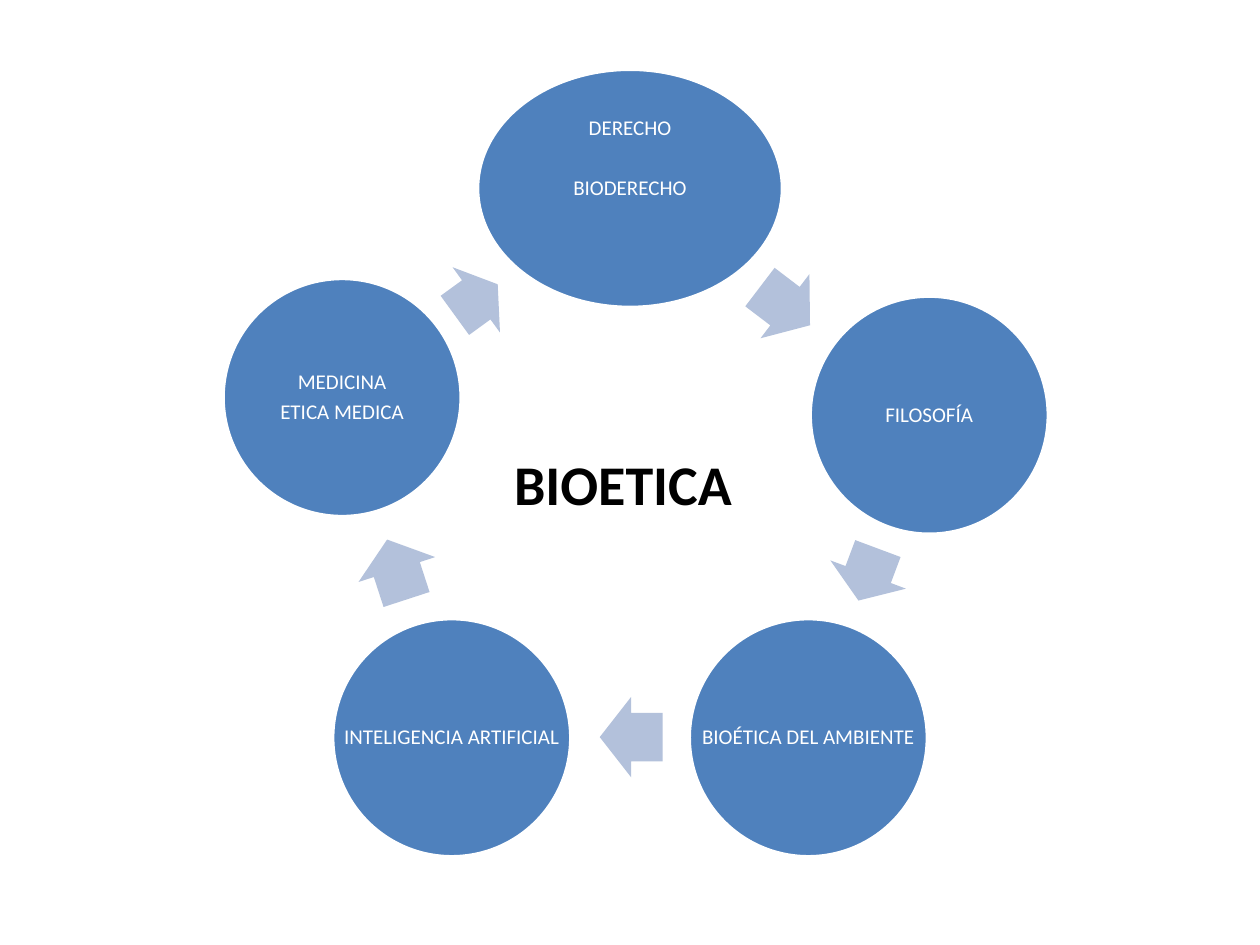
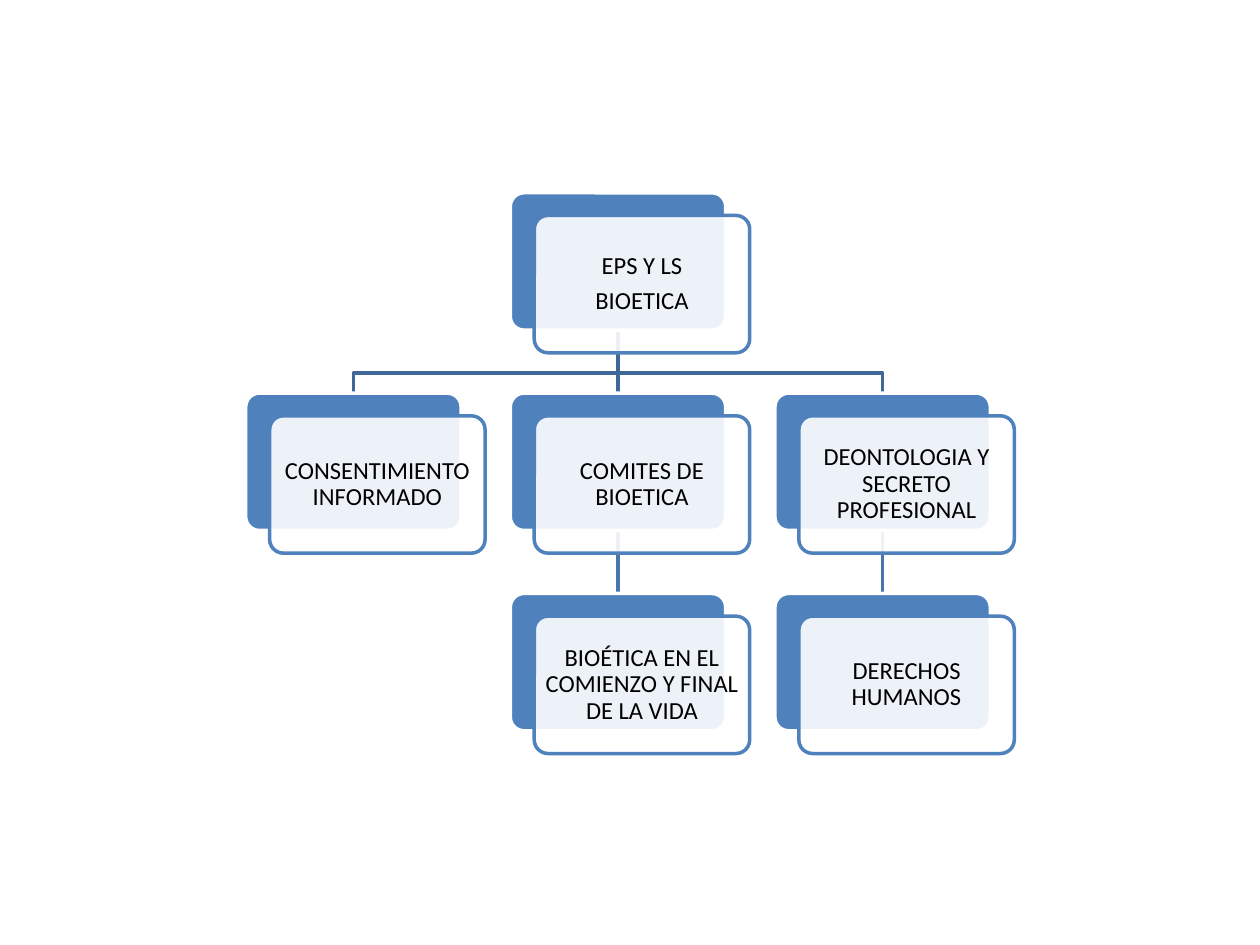
from dataclasses import dataclass
from typing import Any, NamedTuple, Optional

import lxml.etree
import pptx
import pptx.dml.color
import pptx.enum.shapes
import pptx.enum.text
import pptx.oxml.ns
import pptx.util

Inches = pptx.util.Inches
Pt = pptx.util.Pt
RGB = pptx.dml.color.RGBColor
Preset = pptx.enum.shapes.MSO_SHAPE
Align = pptx.enum.text.PP_ALIGN
Anchor = pptx.enum.text.MSO_ANCHOR


@dataclass(frozen=True)
class Theme:
    font: str = "Calibri"
    blue: RGB = RGB(0x4F, 0x81, 0xBD)
    pale_blue: RGB = RGB(0xB3, 0xC1, 0xDB)
    upper_link: RGB = RGB(0x3F, 0x67, 0x97)
    lower_link: RGB = RGB(0x48, 0x75, 0xAC)
    white: RGB = RGB(0xFF, 0xFF, 0xFF)
    black: RGB = RGB(0, 0, 0)
    title_size: int = 32
    field_size: int = 12
    topic_size: int = 14
    stroke: int = 2
    card_opacity: int = 90


THEME = Theme()


class Box(NamedTuple):
    left: float
    top: float
    width: float
    height: float

    def emu(self) -> list[int]:
        return [Inches(length) for length in self]


class Field(NamedTuple):
    lines: list[str]
    box: Box
    gap: float = 4.2
    bottom: float = 0.02


class Step(NamedTuple):
    box: Box
    rotation: float


class Topic(NamedTuple):
    lines: list[str]
    column: int
    row: int
    parent: Optional[int] = None


FIELD_SIZE = 1.89
FIELDS = [
    Field(["DERECHO", "BIODERECHO"], Box(3.79, 0.55, 2.42, FIELD_SIZE), gap=21, bottom=0.49),
    Field(["FILOSOFÍA"], Box(6.43, 2.35, FIELD_SIZE, FIELD_SIZE)),
    Field(["BIOÉTICA DEL AMBIENTE"], Box(5.47, 4.91, FIELD_SIZE, FIELD_SIZE)),
    Field(["INTELIGENCIA ARTIFICIAL"], Box(2.64, 4.91, FIELD_SIZE, FIELD_SIZE)),
    Field(["MEDICINA", "ETICA MEDICA"], Box(1.77, 2.21, FIELD_SIZE, FIELD_SIZE)),
]
STEP_HEIGHT = 0.64
STEPS = [
    Step(Box(5.98, 2.11, 0.5, STEP_HEIGHT), 37.3),
    Step(Box(6.67, 4.24, 0.44, STEP_HEIGHT), 110.5),
    Step(Box(4.76, 5.53, 0.5, STEP_HEIGHT), 180),
    Step(Box(2.9, 4.2, 0.5, STEP_HEIGHT), 252),
    Step(Box(3.57, 2.06, 0.42, STEP_HEIGHT), 324),
]

TOPICS = [
    Topic(["EPS Y LS", "BIOETICA"], 1, 0),
    Topic(["CONSENTIMIENTO INFORMADO"], 0, 1, 0),
    Topic(["COMITES DE BIOETICA"], 1, 1, 0),
    Topic(["BIOÉTICA EN EL COMIENZO Y FINAL DE LA VIDA"], 1, 2, 2),
    Topic(["DEONTOLOGIA Y SECRETO PROFESIONAL"], 2, 1, 0),
    Topic(["DERECHOS HUMANOS"], 2, 2, 4),
]
CARD_WIDTH, CARD_HEIGHT = 1.71, 1.09
FIRST_LEFT, FIRST_TOP = 1.95, 1.53
COLUMN_PITCH, ROW_PITCH = 2.1, 1.59
CARD_OFFSET_X, CARD_OFFSET_Y = 0.19, 0.18
BEND_ABOVE_CHILD = 0.16


def apply(target: Any, formats: dict[str, Any]) -> None:
    for attribute, setting in formats.items():
        setattr(target, attribute, setting)


def stroke(line: Any, colour: RGB) -> None:
    line.color.rgb = colour
    line.width = Pt(THEME.stroke)


def add_preset(slide: Any, preset: Any, box: Box, fill: RGB,
               outline: Optional[RGB] = None,
               adjustments: tuple[float, ...] = ()) -> Any:
    shape = slide.shapes.add_shape(preset, *box.emu())
    shape.shadow.inherit = False
    shape.fill.solid()
    shape.fill.fore_color.rgb = fill
    if outline is None:
        shape.line.fill.background()
    else:
        stroke(shape.line, outline)
    for index, amount in enumerate(adjustments):
        shape.adjustments[index] = amount
    return shape


def write_lines(shape: Any, lines: list[str], size: int, colour: RGB,
                gap: float, frame_formats: dict[str, Any]) -> None:
    frame = shape.text_frame
    apply(frame, {"vertical_anchor": Anchor.MIDDLE, **frame_formats})
    for index, line in enumerate(lines):
        paragraph = frame.paragraphs[0] if index == 0 else frame.add_paragraph()
        paragraph.text = line
        apply(paragraph, {"alignment": Align.CENTER, "line_spacing": 0.9,
                          "space_after": Pt(gap)})
        apply(paragraph.font, {"name": THEME.font, "size": Pt(size)})
        paragraph.font.color.rgb = colour


def margins(inset: float, bottom: Optional[float] = None) -> dict[str, int]:
    formats = {f"margin_{side}": Inches(inset)
               for side in ("left", "top", "right", "bottom")}
    if bottom is not None:
        formats["margin_bottom"] = Inches(bottom)
    return formats


def draw_field(slide: Any, field: Field) -> None:
    circle = add_preset(slide, Preset.OVAL, field.box, THEME.blue, THEME.white)
    write_lines(circle, field.lines, THEME.field_size, THEME.white, field.gap,
                {"word_wrap": False, **margins(0.02, field.bottom)})


def draw_step(slide: Any, step: Step) -> None:
    arrow = add_preset(slide, Preset.RIGHT_ARROW, step.box, THEME.pale_blue,
                       adjustments=(0.6, 0.5))
    arrow.rotation = step.rotation


def place_title(slide: Any, text: str, box: Box) -> None:
    title = slide.shapes.title
    apply(title, dict(zip(("left", "top", "width", "height"), box.emu())))
    title.text_frame.text = text
    apply(title.text_frame, {"vertical_anchor": Anchor.TOP, "word_wrap": True,
                             "auto_size": pptx.enum.text.MSO_AUTO_SIZE.NONE})
    paragraph = title.text_frame.paragraphs[0]
    paragraph.alignment = Align.LEFT
    apply(paragraph.font, {"name": THEME.font, "size": Pt(THEME.title_size), "bold": True})
    paragraph.font.color.rgb = THEME.black


def topic_box(topic: Topic) -> Box:
    return Box(FIRST_LEFT + topic.column * COLUMN_PITCH,
               FIRST_TOP + topic.row * ROW_PITCH, CARD_WIDTH, CARD_HEIGHT)


def draw_link(slide: Any, parent: Topic, child: Topic) -> None:
    above, below = topic_box(parent), topic_box(child)
    start_x = Inches(above.left + CARD_WIDTH / 2)
    start_y = Inches(above.top + CARD_HEIGHT)
    end_x, end_y = Inches(below.left + CARD_WIDTH / 2), Inches(below.top)
    if parent.column == child.column:
        link = slide.shapes.add_connector(
            pptx.enum.shapes.MSO_CONNECTOR.STRAIGHT, start_x, start_y, end_x, end_y)
        lxml.etree.SubElement(link.element.spPr, pptx.oxml.ns.qn("a:effectLst"))
    else:
        bend_y = Inches(below.top - BEND_ABOVE_CHILD)
        route = slide.shapes.build_freeform(start_x, start_y)
        route.add_line_segments(
            [(start_x, bend_y), (end_x, bend_y), (end_x, end_y)], close=False)
        link = route.convert_to_shape()
        link.shadow.inherit = False
        link.fill.background()
    stroke(link.line, THEME.upper_link if parent.row == 0 else THEME.lower_link)


def draw_topic(slide: Any, topic: Topic) -> None:
    back = topic_box(topic)
    front = back._replace(left=back.left + CARD_OFFSET_X, top=back.top + CARD_OFFSET_Y)
    add_preset(slide, Preset.ROUNDED_RECTANGLE, back, THEME.blue, THEME.white, (0.1,))
    card = add_preset(slide, Preset.ROUNDED_RECTANGLE, front, THEME.white,
                      THEME.blue, (0.1,))
    colour = card.element.spPr.find(
        f"{pptx.oxml.ns.qn('a:solidFill')}/{pptx.oxml.ns.qn('a:srgbClr')}")
    lxml.etree.SubElement(colour, pptx.oxml.ns.qn("a:alpha"),
                          val=str(THEME.card_opacity * 1000))
    write_lines(card, topic.lines, THEME.topic_size, THEME.black, 4.9,
                {"word_wrap": True, **margins(0.03)})


def build_cycle(deck: Any) -> None:
    slide = deck.slides.add_slide(deck.slide_layouts[5])
    for field, step in zip(FIELDS, STEPS):
        draw_field(slide, field)
        draw_step(slide, step)
    place_title(slide, "BIOETICA", Box(3.98, 3.52, 2.42, 0.64))


def build_hierarchy(deck: Any) -> None:
    slide = deck.slides.add_slide(deck.slide_layouts[6])
    for topic in TOPICS:
        if topic.parent is not None:
            draw_link(slide, TOPICS[topic.parent], topic)
    for topic in TOPICS:
        draw_topic(slide, topic)


def main() -> None:
    deck = pptx.Presentation()
    apply(deck, {"slide_width": Inches(10), "slide_height": Inches(7.5)})
    build_cycle(deck)
    build_hierarchy(deck)
    deck.save("out.pptx")


if __name__ == "__main__":
    main()
